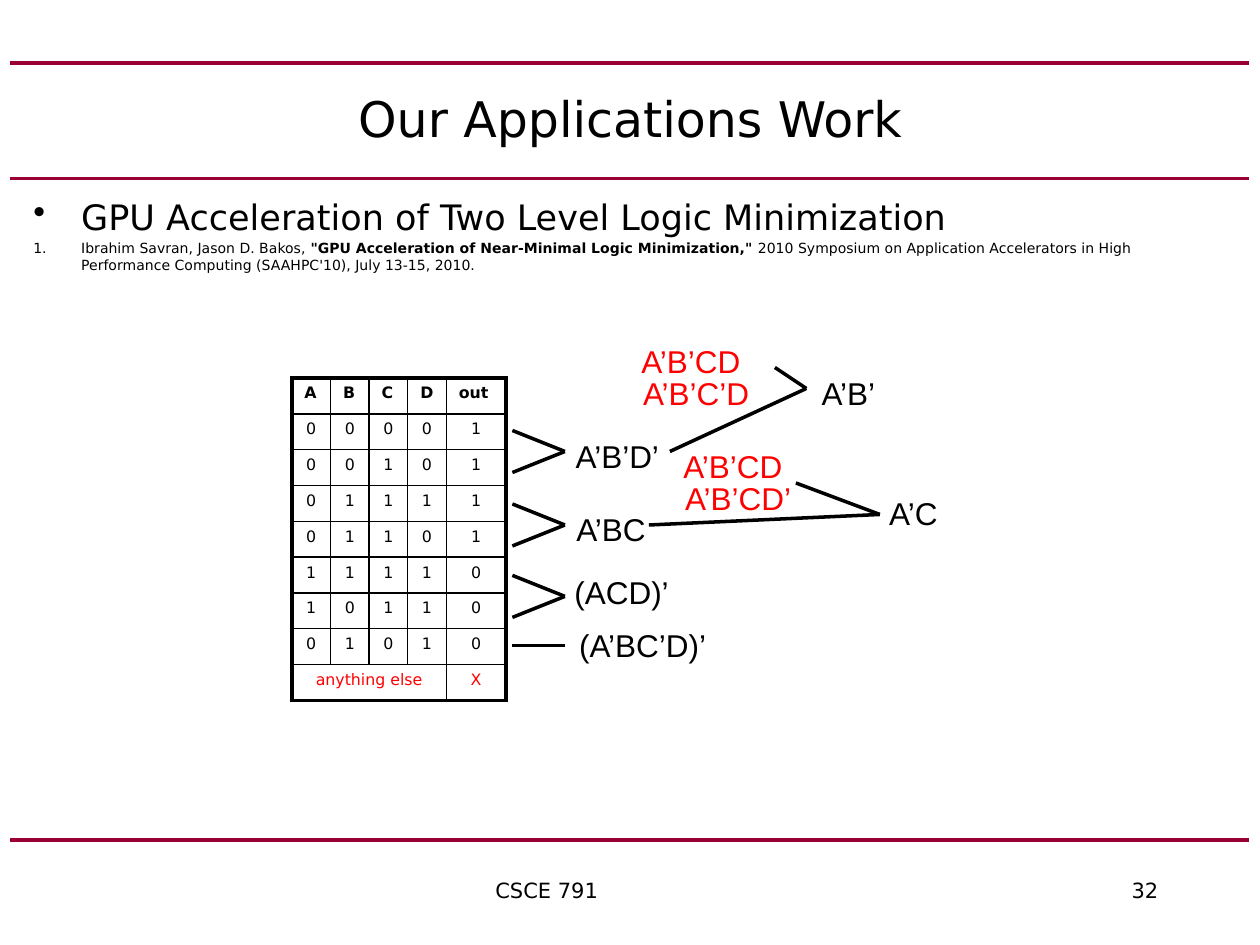
"""Build the logic minimization slide with its truth table and reduced terms."""
from lxml.etree import SubElement
from pptx import Presentation
from pptx.dml.color import RGBColor
from pptx.enum.shapes import MSO_CONNECTOR as Connector
from pptx.enum.text import MSO_ANCHOR as Anchor, MSO_AUTO_SIZE as AutoSize, PP_ALIGN as Align
from pptx.oxml.ns import qn
from pptx.util import Inches, Pt

COLORS = {"rule": "990033", "ink": "000000", "red": "FF0000"}
SANS, ARIAL = "DejaVu Sans", "Arial"
UNIT = Inches(1) / 12


def grid(*lengths):
    return [round(length * UNIT) for length in lengths]


def style(font, size, color="ink", face=SANS, bold=False):
    font.size, font.name, font.bold = Pt(size), face, bold
    font.color.rgb = RGBColor.from_string(COLORS[color])


prs = Presentation()
prs.slide_width, prs.slide_height = grid(120, 90)
slide = prs.slides.add_slide(prs.slide_layouts[5])
shapes = slide.shapes

title = shapes.title
title.left, title.top, title.width, title.height = grid(6, 6, 108, 10.4)
title.text_frame.text = "Our Applications Work"
title.text_frame.vertical_anchor = Anchor.MIDDLE
heading = title.text_frame.paragraphs[0]
heading.alignment = Align.CENTER
style(heading.runs[0].font, 28)

body = shapes.add_textbox(*grid(2, 18, 114, 15)).text_frame
body.word_wrap = True
topic, citation = body.paragraphs[0], body.add_paragraph()
topic.text = "GPU Acceleration of Two Level Logic Minimization"
for part in (
    "Ibrahim Savran, Jason D. Bakos, ",
    '"GPU Acceleration of Near-Minimal Logic Minimization,"',
    " 2010 Symposium on Application Accelerators in High Performance Computing "
    "(SAAHPC'10), July 13-15, 2010.",
):
    citation.add_run().text = part
citation.space_before = Pt(1.6)
for paragraph, marker, attributes, size in (
    (topic, "a:buChar", {"char": "•"}, 20),
    (citation, "a:buAutoNum", {"type": "arabicPeriod"}, 8),
):
    properties = paragraph._p.get_or_add_pPr()
    properties.set("marL", str(Inches(0.38)))
    properties.set("indent", str(-Inches(0.38)))
    SubElement(properties, qn(marker), attributes)
    for run in paragraph.runs:
        style(run.font, size, bold=run.text.startswith('"'))

truth_rows = ["00001", "00101", "01111", "01101", "11110", "10110", "01010"]
truth = [["A", "B", "C", "D", "out"], *map(list, truth_rows),
         ["anything else", "", "", "", "X"]]
last_row, last_column = len(truth) - 1, len(truth[0]) - 1
truth_table = shapes.add_table(len(truth), len(truth[0]), *grid(27.8, 36, 20.4, 30.7)).table
truth_table.first_row = truth_table.horz_banding = False
for row in truth_table.rows:
    row.height = round(30.7 / len(truth) * UNIT)
for column, width in zip(truth_table.columns, grid(3.68, 3.68, 3.68, 3.68, 5.68)):
    column.width = width
truth_table.cell(last_row, 0).merge(truth_table.cell(last_row, last_column - 1))

for r, values in enumerate(truth):
    for c, value in enumerate(values):
        cell = truth_table.cell(r, c)
        outer_edges = {"L": c == 0, "R": c == last_column, "T": r == 0, "B": r == last_row}
        for side, outer in outer_edges.items():
            border = SubElement(cell._tc.get_or_add_tcPr(), qn(f"a:ln{side}"),
                                w=str(Pt(2.25 if outer else 1)))
            SubElement(SubElement(border, qn("a:solidFill")), qn("a:srgbClr"), val=COLORS["ink"])
        cell.fill.background()
        if value:
            cell.text_frame.text = value
            entry = cell.text_frame.paragraphs[0]
            entry.alignment = Align.CENTER if r else Align.LEFT
            style(entry.runs[0].font, 9, "red" if r == last_row else "ink", bold=r == 0)

rules = [(1, y, 119, y, "rule", 2.25) for y in (6, 17, 80)]
brackets = [(48.8, middle + side, 53.8, middle, "ink", 2)
            for middle in (43, 50, 56.8) for side in (-2, 2)]
links = [
    (48.8, 61.5, 53.8, 61.5, "ink", 2),
    (63.8, 43, 76.8, 37, "ink", 2),
    (73.8, 35, 76.8, 37, "ink", 2),
    (61.8, 50, 83.8, 49, "ink", 2),
    (75.8, 46, 83.8, 49, "ink", 2),
]
for *ends, color, weight in rules + brackets + links:
    connector = shapes.add_connector(Connector.STRAIGHT, *grid(*ends))
    connector.line.color.rgb = RGBColor.from_string(COLORS[color])
    connector.line.width = Pt(weight)
    SubElement(connector._element.spPr, qn("a:effectLst"))

terms = [
    ("A’B’D’", 52.8, 41, 12, "ink"),
    ("A’BC", 52.2, 48, 12, "ink"),
    ("(ACD)’", 53.2, 54, 12, "ink"),
    ("(A’BC’D)’", 52.6, 59, 17.2, "ink"),
    ("A’B’CD", 59.8, 32, 12, "red"),
    ("A’B’C’D", 59.8, 35, 13, "red"),
    ("A’B’", 74.8, 35, 12, "ink"),
    ("A’B’CD", 63.8, 42, 12, "red"),
    ("A’B’CD’", 63.8, 45, 13, "red"),
    ("A’C", 81, 46.5, 12, "ink"),
]
for term, left, top, width, color in terms:
    label = shapes.add_textbox(*grid(left, top, width, 4.8)).text_frame
    label.word_wrap = True
    label.auto_size = AutoSize.SHAPE_TO_FIT_TEXT
    label.text = term
    label.paragraphs[0].alignment = Align.CENTER
    style(label.paragraphs[0].runs[0].font, 18, color, ARIAL)

footer = shapes.add_textbox(*grid(34, 83, 84, 4)).text_frame
footer.word_wrap = True
footer.text = "\tCSCE 791\t32"
course = footer.paragraphs[0]
tab_stops = SubElement(course._p.get_or_add_pPr(), qn("a:tabLst"))
for stop in grid(12, 72.6):
    SubElement(tab_stops, qn("a:tab"), pos=str(stop), algn="l")
style(course.runs[0].font, 12)

prs.save("out.pptx")
